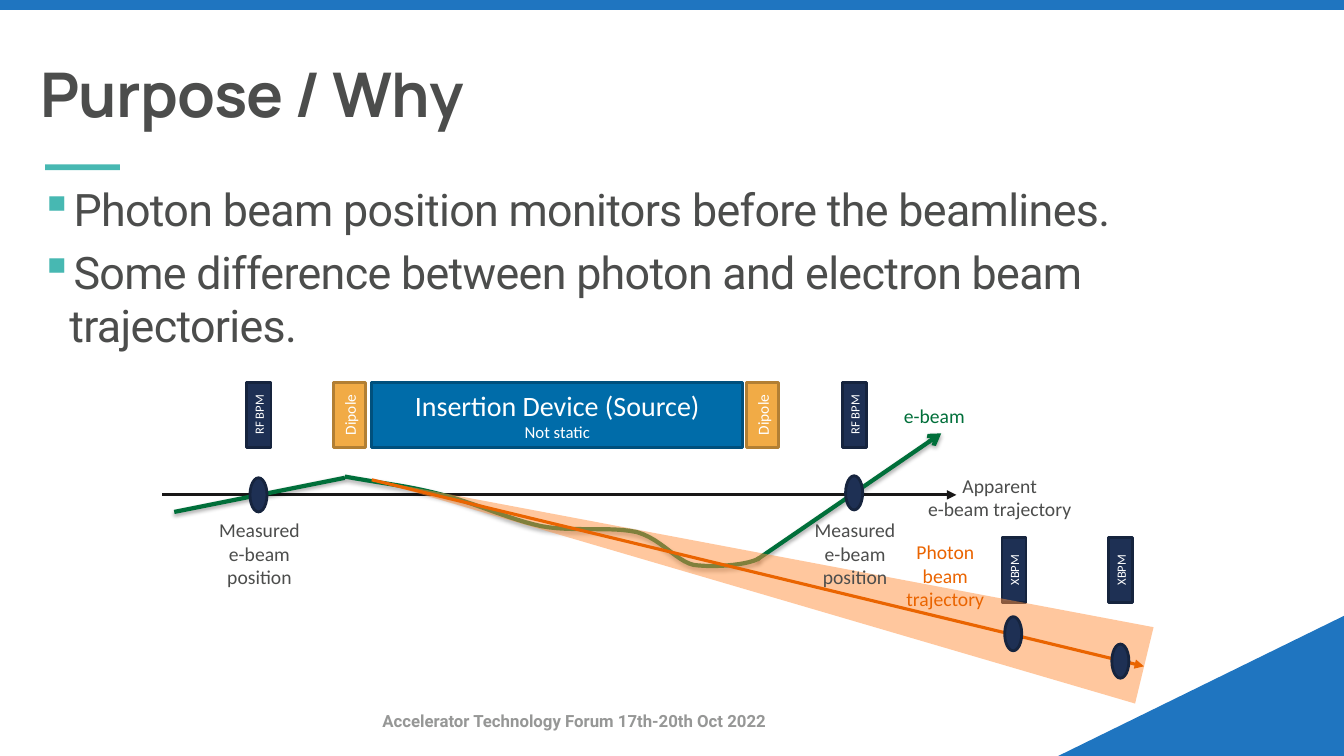
from dataclasses import dataclass

from lxml.etree import SubElement
from pptx import Presentation
from pptx.dml.color import RGBColor
from pptx.enum.shapes import MSO_CONNECTOR, MSO_SHAPE
from pptx.enum.text import MSO_ANCHOR, PP_ALIGN
from pptx.oxml.ns import qn
from pptx.util import Cm, Pt


@dataclass(frozen=True)
class Theme:
    blue: str = "1F75C0"
    teal: str = "47B8B2"
    text: str = "4C4D4C"
    footer: str = "969796"
    white: str = "FFFFFF"
    source: tuple = ("006CA9", "00507D")
    dipole: tuple = ("F1AB46", "B27F34")
    monitor: tuple = ("1E3054", "16243E")
    axis: str = "181717"
    electron: str = "006F3A"
    photon: str = "EA6400"
    cone: str = "FF913F"
    heading_font: str = "Manrope"
    body_font: str = "Roboto"
    label_font: str = "Calibri"
    title_size: int = 44
    body_size: int = 32
    source_size: int = 20
    label_size: int = 14
    small_size: int = 12
    dipole_size: int = 11
    monitor_size: int = 9


class SlideBuilder:
    def __init__(self, page, theme):
        self.page = page
        self.theme = theme

    def fill_text(self, shape, lines, sizes, color, font, align=PP_ALIGN.CENTER,
                  bold=False, spacing=None):
        shape.text_frame.text = "\n".join(lines)
        for para, size in zip(shape.text_frame.paragraphs, sizes):
            para.alignment = align
            for span in para.runs:
                span.font.size = Pt(size)
                span.font.name = font
                span.font.bold = bold
                span.font.color.rgb = RGBColor.from_string(color)
                if spacing is not None:
                    span.font._element.set("spc", str(spacing))

    def text(self, place, lines, size, color, font=None, anchor=MSO_ANCHOR.TOP,
             wrap=True, **style):
        box = self.page.shapes.add_textbox(*map(Cm, place))
        box.text_frame.word_wrap = wrap
        box.text_frame.vertical_anchor = anchor
        self.fill_text(box, lines, [size] * len(lines), color,
                       font or self.theme.label_font, **style)
        return box

    def bullets(self, place, lines):
        theme = self.theme
        box = self.text(place, lines, theme.body_size, theme.text, theme.body_font,
                        align=PP_ALIGN.LEFT, spacing=-50)
        for index, para in enumerate(box.text_frame.paragraphs):
            para.space_before = Pt(6.4 if index else 0)
            properties = para._p.get_or_add_pPr()
            properties.set("marL", str(Cm(0.74)))
            properties.set("indent", str(-Cm(0.74)))
            color = SubElement(properties, qn("a:buClr"))
            SubElement(color, qn("a:srgbClr"), val=theme.teal)
            SubElement(properties, qn("a:buChar"), char="▪")

    def shape(self, kind, place, fill, edge=None):
        shape = self.page.shapes.add_shape(kind, *map(Cm, place))
        shape.shadow.inherit = False
        shape.fill.solid()
        shape.fill.fore_color.rgb = RGBColor.from_string(fill)
        if edge:
            shape.line.color.rgb = RGBColor.from_string(edge)
            shape.line.width = Pt(2)
        else:
            shape.line.fill.background()
        return shape

    def device(self, place, colors, lines, sizes, upright=True):
        shape = self.shape(MSO_SHAPE.RECTANGLE, place, *colors)
        frame = shape.text_frame
        frame.margin_left = frame.margin_right = 0
        frame.margin_top = frame.margin_bottom = 0
        frame.vertical_anchor = MSO_ANCHOR.MIDDLE
        if upright:
            frame._txBody.bodyPr.set("vert", "vert270")
        self.fill_text(shape, lines, sizes, self.theme.white, self.theme.label_font)

    def position(self, left, top):
        self.shape(MSO_SHAPE.OVAL, (left, top, 0.43, 0.86), *self.theme.monitor)

    def stroke(self, shape, color, width, head=None, shadow=False):
        shape.line.color.rgb = RGBColor.from_string(color)
        shape.line.width = Pt(width)
        if head:
            SubElement(shape.line._get_or_add_ln(), qn("a:tailEnd"), type=head)
        effects = SubElement(shape._element.spPr, qn("a:effectLst"))
        if shadow:
            outer = SubElement(effects, qn("a:outerShdw"), blurRad=str(Pt(3.1)),
                               dist=str(Pt(1.8)), dir="5400000", rotWithShape="0")
            tint = SubElement(outer, qn("a:srgbClr"), val="000000")
            SubElement(tint, qn("a:alpha"), val="35000")

    def line(self, start, end, color, width, **style):
        connector = self.page.shapes.add_connector(
            MSO_CONNECTOR.STRAIGHT, *map(Cm, start + end))
        self.stroke(connector, color, width, **style)

    def curve(self, start, segments, color, width, steps=12, **style):
        points = []
        origin = start
        for first, second, end in segments:
            for step in range(1, steps + 1):
                t = step / steps
                u = 1 - t
                points.append(tuple(
                    Cm(u**3 * a + 3 * u * u * t * b + 3 * u * t * t * c + t**3 * d)
                    for a, b, c, d in zip(origin, first, second, end)))
            origin = end
        builder = self.page.shapes.build_freeform(*map(Cm, start))
        builder.add_line_segments(points, close=False)
        trajectory = builder.convert_to_shape()
        trajectory.fill.background()
        self.stroke(trajectory, color, width, **style)

    def cone(self, place, rotation):
        cone = self.shape(MSO_SHAPE.ISOSCELES_TRIANGLE, place, self.theme.cone)
        cone.adjustments[0] = 0.485
        cone.rotation = rotation
        tint = cone._element.spPr.find(qn("a:solidFill"))[0]
        SubElement(tint, qn("a:alpha"), val="50000")


def main():
    theme = Theme()
    deck = Presentation()
    deck.slide_width, deck.slide_height = Cm(33.87), Cm(19.05)
    page = deck.slides.add_slide(deck.slide_layouts[6])
    build = SlideBuilder(page, theme)

    corner = build.shape(MSO_SHAPE.RIGHT_TRIANGLE, (26.67, 15.52, 7.2, 3.53), theme.blue)
    corner._element.spPr.xfrm.set("flipH", "1")
    build.shape(MSO_SHAPE.RECTANGLE, (0, 0, 33.87, 0.25), theme.blue)
    title = build.text((0.76, 0.25, 31.4, 3.18), ["Purpose / Why"], theme.title_size,
                       theme.text, theme.heading_font, MSO_ANCHOR.BOTTOM,
                       align=PP_ALIGN.LEFT, bold=True, spacing=-50)
    title.text_frame.paragraphs[0].line_spacing = 0.9
    build.bullets((0.76, 4.45, 31.4, 12.57), [
        "Photon beam position monitors before the beamlines.",
        "Some difference between photon and electron beam trajectories."])
    build.shape(MSO_SHAPE.RECTANGLE, (1.14, 4.14, 1.88, 0.15), theme.teal)
    build.text((4.85, 17.65, 19.25, 1.02),
               ["Accelerator Technology Forum 17th-20th Oct 2022"], theme.small_size,
               theme.footer, theme.body_font, MSO_ANCHOR.MIDDLE, bold=True)

    build.device((9.37, 9.63, 9.35, 1.65), theme.source,
                 ["Insertion Device (Source)", "Not static"],
                 [theme.source_size, theme.small_size], upright=False)
    for left in (18.82, 8.41):
        build.device((left, 9.63, 0.81, 1.65), theme.dipole, ["Dipole"],
                     [theme.dipole_size])
    for name, left, top in (("RF BPM", 6.22, 9.63), ("RF BPM", 21.23, 9.63),
                            ("XBPM", 25.25, 13.54), ("XBPM", 27.94, 13.54)):
        build.device((left, top, 0.61, 1.65), theme.monitor, [name],
                     [theme.monitor_size])

    build.line((4.09, 12.47), (24.1, 12.47), theme.axis, 2.25, head="triangle")
    build.line((4.39, 12.9), (8.69, 12.04), theme.electron, 3, shadow=True)
    build.line((19.08, 14.1), (23.72, 10.92), theme.electron, 3, head="arrow", shadow=True)
    build.curve((8.69, 12.01), [
        ((9.86, 12.22), (10.26, 12.24), (11.07, 12.45)),
        ((11.91, 12.65), (12.8, 13.08), (13.64, 13.26)),
        ((14.45, 13.41), (15.37, 13.26), (16.05, 13.41)),
        ((16.71, 13.59), (17.12, 14.25), (17.6, 14.25)),
        ((18.14, 14.3), (18.9, 14.22), (19.13, 14.07))], theme.electron, 3, shadow=True)
    build.cone((18.11, 4.39, 1.98, 20.04), 283.6)

    for left in (5.23, 20.24):
        build.text((left, 12.93, 2.62, 2.31), ["Measured", "e-beam", "position"],
                   theme.label_size, theme.text, wrap=False)
    build.text((23.11, 11.81, 4.17, 1.45), ["Apparent", "e-beam trajectory"],
               theme.label_size, theme.text, wrap=False)
    build.line((9.37, 12.09), (28.83, 16.79), theme.photon, 2.25, head="triangle")
    build.text((22.58, 13.49, 2.49, 2.06), ["Photon", "beam", "trajectory"],
               theme.label_size, theme.photon, wrap=False)
    build.text((22.53, 10.06, 3.68, 0.86), ["e-beam"], theme.label_size,
               theme.electron, align=PP_ALIGN.LEFT)
    for left, top in ((6.3, 12.04), (21.31, 11.99), (25.32, 15.54), (28.02, 16.23)):
        build.position(left, top)

    deck.save("out.pptx")


if __name__ == "__main__":
    main()
